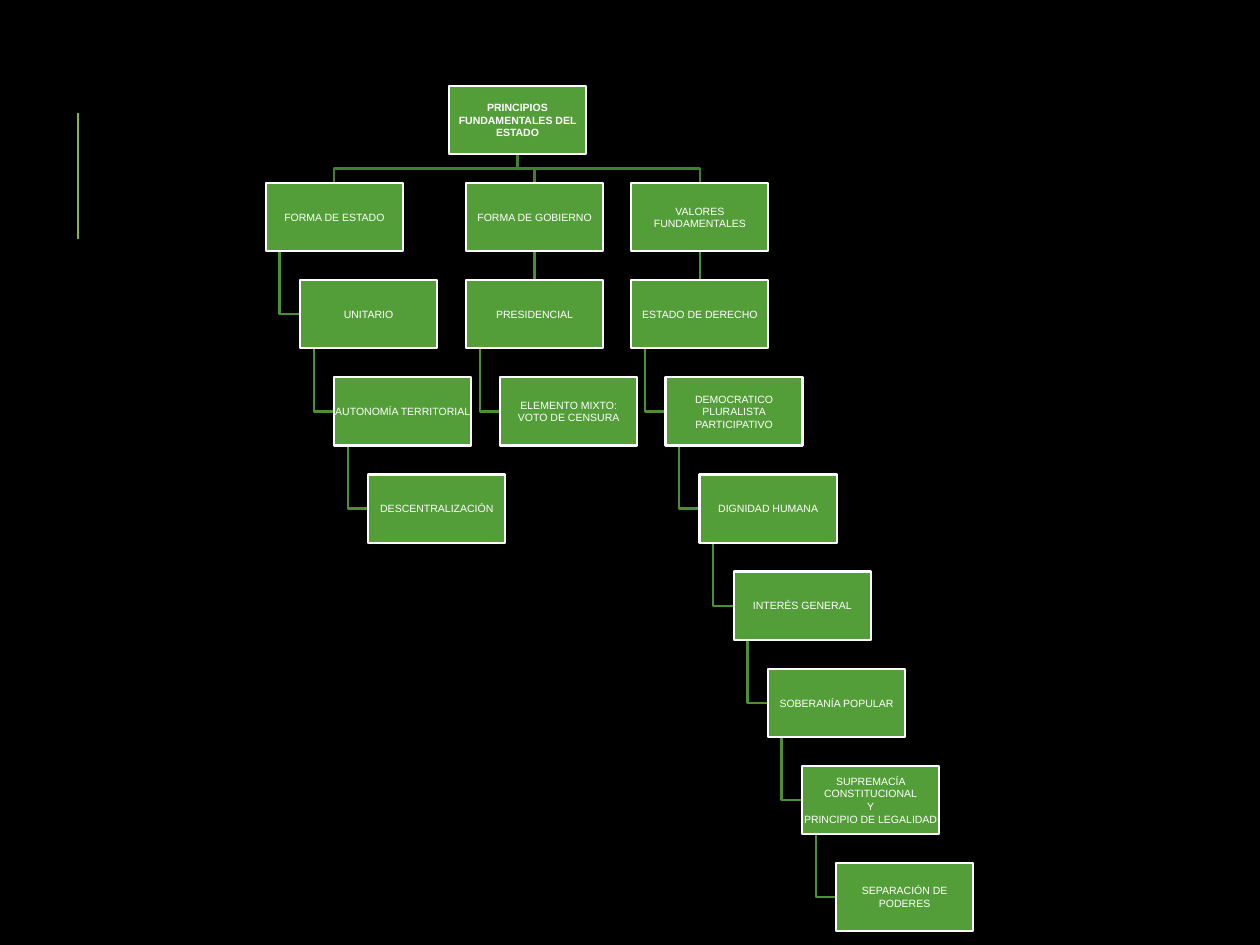
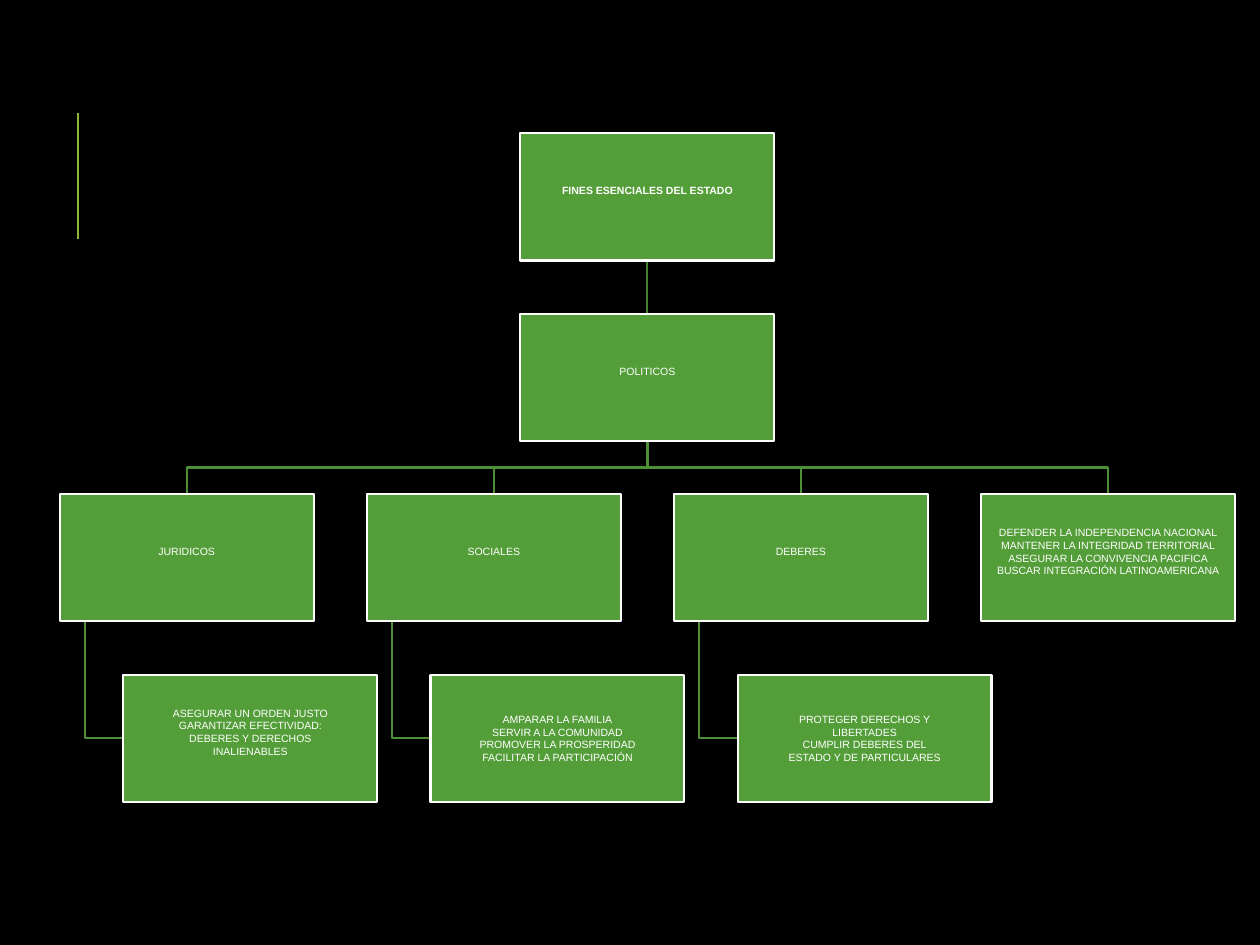
from collections.abc import Iterator
from dataclasses import dataclass

import lxml.etree
import pptx
import pptx.dml.color
import pptx.enum.shapes
import pptx.enum.text
import pptx.oxml.ns
import pptx.presentation
import pptx.shapes.connector
import pptx.slide
import pptx.util

PX_PER_INCH = 192
SLIDE_WIDTH, SLIDE_HEIGHT = 1920, 1440
ACCENT_X, ACCENT_TOP, ACCENT_BOTTOM = 119, 173, 365


@dataclass(frozen=True)
class Theme:
    background: str = "000000"
    accent: str = "8AB833"
    box: str = "549E39"
    text: str = "FFFFFF"
    first_link: str = "437F2E"
    lower_link: str = "4C8F34"
    font: str = "Arial"
    text_size: float = 6
    text_line: int = 19
    accent_width: float = 1.5
    line_width: float = 1.25


@dataclass(frozen=True)
class Node:
    """A box; without a left edge of its own it hangs indented from its parent."""
    text: str
    children: tuple["Node", ...] = ()
    left: int | None = None
    lifted: bool = False


@dataclass(frozen=True)
class Chart:
    root: Node
    top: int
    box_width: int
    box_height: int
    row_pitch: int
    indent: int


@dataclass(frozen=True)
class Placed:
    node: Node
    left: int
    top: int
    level: int
    parent: "Placed | None"


THEME = Theme()


def px(length: float) -> pptx.util.Emu:
    return pptx.util.Emu(round(length * 914400 / PX_PER_INCH))


def rgb(colour: str) -> pptx.dml.color.RGBColor:
    return pptx.dml.color.RGBColor.from_string(colour)


def chain(*texts: str) -> tuple[Node, ...]:
    """Nest texts so that each box hangs from the one before it."""
    branch: tuple[Node, ...] = ()
    for text in reversed(texts):
        branch = (Node(text, branch),)
    return branch


def place(chart: Chart, node: Node, parent: Placed | None = None) -> Iterator[Placed]:
    """Yield a node and all its descendants with their positions."""
    level = parent.level + 1 if parent else 0
    left = parent.left + chart.indent if node.left is None else node.left
    placed = Placed(node, left, chart.top + level * chart.row_pitch, level, parent)
    yield placed
    for child in node.children:
        yield from place(chart, child, placed)


def draw_straight(slide: pptx.slide.Slide, x: float, start: int, end: int,
                  colour: str, width: float) -> None:
    line = slide.shapes.add_connector(
        pptx.enum.shapes.MSO_CONNECTOR.STRAIGHT, px(x), px(start), px(x), px(end))
    line.line.color.rgb = rgb(colour)
    line.line.width = pptx.util.Pt(width)
    lxml.etree.SubElement(line._element.spPr, pptx.oxml.ns.qn("a:effectLst"))


def draw_elbow(slide: pptx.slide.Slide, points: list[tuple[float, float]],
               colour: str) -> None:
    corners = [(px(x), px(y)) for x, y in points]
    builder = slide.shapes.build_freeform(*corners[0])
    builder.add_line_segments(corners[1:], close=False)
    elbow = builder.convert_to_shape()
    elbow.shadow.inherit = False
    elbow.fill.background()
    elbow.line.color.rgb = rgb(colour)
    elbow.line.width = pptx.util.Pt(THEME.line_width)


def draw_link(slide: pptx.slide.Slide, chart: Chart, child: Placed) -> None:
    parent = child.parent
    colour = THEME.first_link if child.level == 1 else THEME.lower_link
    start = parent.top + chart.box_height
    if child.node.left is None:
        trunk = parent.left + chart.box_width / 10
        middle = child.top + chart.box_height / 2
        draw_elbow(slide, [(trunk, start), (trunk, middle), (child.left, middle)], colour)
    elif child.left == parent.left:
        draw_straight(slide, child.left + chart.box_width / 2, start, child.top,
                      colour, THEME.line_width)
    else:
        from_x = parent.left + chart.box_width / 2
        to_x = child.left + chart.box_width / 2
        middle = (start + child.top) / 2
        draw_elbow(slide, [(from_x, start), (from_x, middle), (to_x, middle),
                           (to_x, child.top)], colour)


def draw_box(slide: pptx.slide.Slide, chart: Chart, placed: Placed) -> None:
    box = slide.shapes.add_shape(
        pptx.enum.shapes.MSO_SHAPE.RECTANGLE, px(placed.left), px(placed.top),
        px(chart.box_width), px(chart.box_height))
    box.shadow.inherit = False
    box.fill.solid()
    box.fill.fore_color.rgb = rgb(THEME.box)
    box.line.color.rgb = rgb(THEME.text)
    box.line.width = pptx.util.Pt(THEME.line_width)
    frame = box.text_frame
    frame.word_wrap = True
    frame.vertical_anchor = pptx.enum.text.MSO_ANCHOR.MIDDLE
    frame.margin_left = frame.margin_right = frame.margin_top = 0
    frame.margin_bottom = px(THEME.text_line if placed.node.lifted else 0)
    frame.text = placed.node.text
    for paragraph in frame.paragraphs:
        paragraph.alignment = pptx.enum.text.PP_ALIGN.CENTER
        paragraph.font.name = THEME.font
        paragraph.font.size = pptx.util.Pt(THEME.text_size)
        paragraph.font.bold = placed.level == 0
        paragraph.font.color.rgb = rgb(THEME.text)


def add_chart_slide(deck: pptx.presentation.Presentation, chart: Chart) -> None:
    slide = deck.slides.add_slide(deck.slide_layouts.get_by_name("Blank"))
    draw_straight(slide, ACCENT_X, ACCENT_TOP, ACCENT_BOTTOM,
                  THEME.accent, THEME.accent_width)
    boxes = list(place(chart, chart.root))
    for placed in boxes[1:]:
        draw_link(slide, chart, placed)
    for placed in boxes:
        draw_box(slide, chart, placed)


PRINCIPLES = Chart(
    Node("PRINCIPIOS FUNDAMENTALES DEL ESTADO", left=684, children=(
        Node("FORMA DE ESTADO", left=405, children=chain(
            "UNITARIO", "AUTONOMÍA TERRITORIAL", "DESCENTRALIZACIÓN")),
        Node("FORMA DE GOBIERNO", left=710, children=(
            Node("PRESIDENCIAL", left=710,
                 children=chain("ELEMENTO MIXTO:\nVOTO DE CENSURA")),)),
        Node("VALORES FUNDAMENTALES", left=962, children=(
            Node("ESTADO DE DERECHO", left=962, children=chain(
                "DEMOCRATICO\nPLURALISTA\nPARTICIPATIVO",
                "DIGNIDAD HUMANA",
                "INTERÉS GENERAL",
                "SOBERANÍA POPULAR",
                "SUPREMACÍA CONSTITUCIONAL\nY\nPRINCIPIO DE LEGALIDAD",
                "SEPARACIÓN DE\nPODERES")),)),
    )),
    top=131, box_width=209, box_height=104, row_pitch=148, indent=52)

AIMS_LEFT, AIMS_PITCH, AIMS_ROOT_LEFT = 91, 468, 793
AIMS = (
    Node("JURIDICOS", lifted=True, left=AIMS_LEFT, children=(
        Node("ASEGURAR UN ORDEN JUSTO\nGARANTIZAR EFECTIVIDAD:\n"
             "DEBERES Y DERECHOS\nINALIENABLES", lifted=True),)),
    Node("SOCIALES", lifted=True, left=AIMS_LEFT + AIMS_PITCH, children=chain(
        "AMPARAR LA FAMILIA\nSERVIR A LA COMUNIDAD\n"
        "PROMOVER LA PROSPERIDAD\nFACILITAR LA PARTICIPACIÓN")),
    Node("DEBERES", lifted=True, left=AIMS_LEFT + 2 * AIMS_PITCH, children=chain(
        "PROTEGER DERECHOS Y\nLIBERTADES\n"
        "CUMPLIR DEBERES DEL\nESTADO Y DE PARTICULARES")),
    Node("DEFENDER LA INDEPENDENCIA NACIONAL\nMANTENER LA INTEGRIDAD TERRITORIAL\n"
         "ASEGURAR LA CONVIVENCIA PACIFICA\nBUSCAR INTEGRACIÓN LATINOAMERICANA",
         lifted=True, left=AIMS_LEFT + 3 * AIMS_PITCH),
)
ESSENTIAL_AIMS = Chart(
    Node("FINES ESENCIALES DEL ESTADO", lifted=True, left=AIMS_ROOT_LEFT, children=(
        Node("POLITICOS", AIMS, left=AIMS_ROOT_LEFT, lifted=True),)),
    top=203, box_width=387, box_height=194, row_pitch=275, indent=97)


def main() -> None:
    deck = pptx.Presentation()
    deck.slide_width, deck.slide_height = px(SLIDE_WIDTH), px(SLIDE_HEIGHT)
    backdrop = deck.slide_master.background.fill
    backdrop.solid()
    backdrop.fore_color.rgb = rgb(THEME.background)
    for chart in (PRINCIPLES, ESSENTIAL_AIMS):
        add_chart_slide(deck, chart)
    deck.save("out.pptx")


if __name__ == "__main__":
    main()
